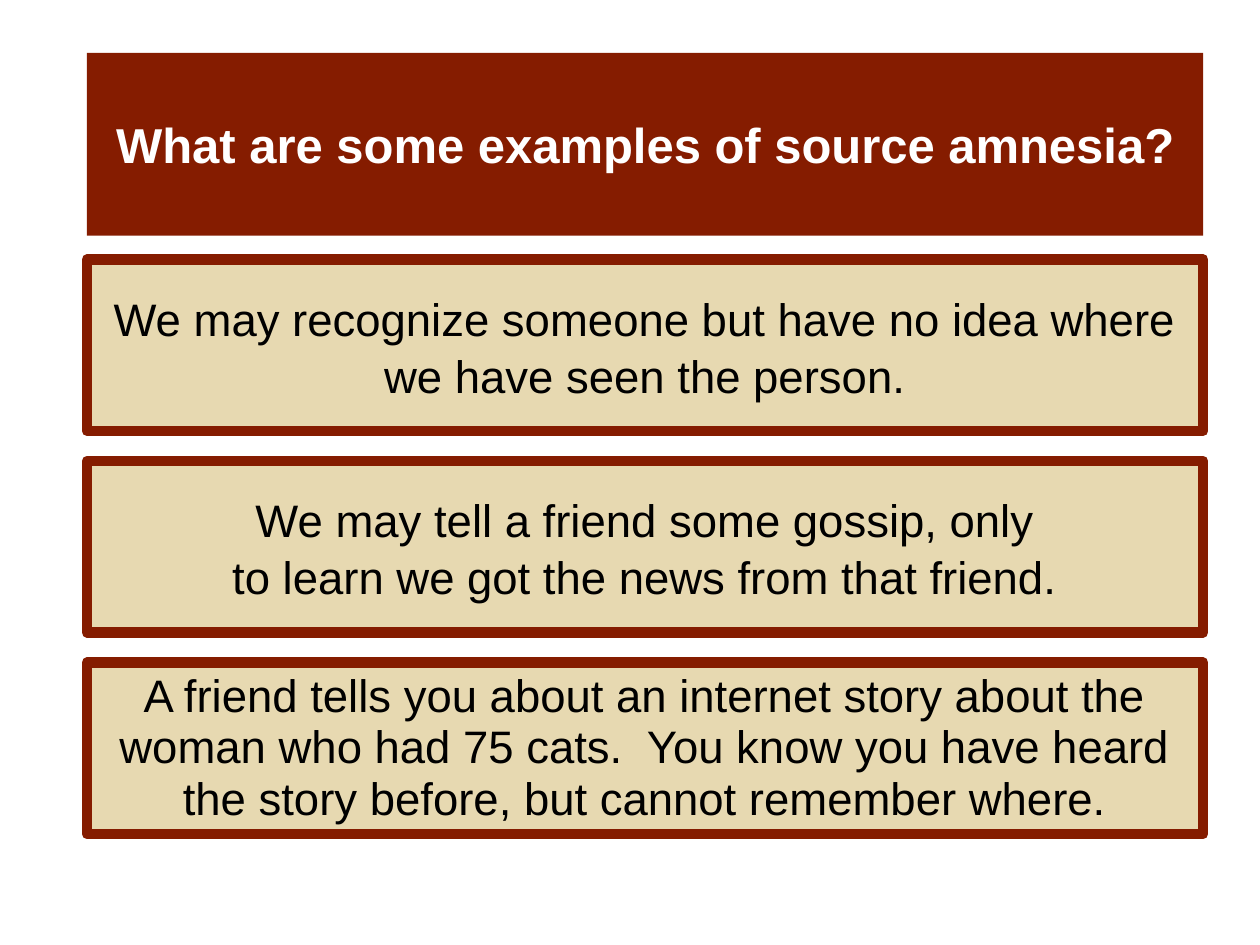
import pptx
import pptx.util
import pptx.dml.color
import pptx.enum.shapes
import pptx.enum.text

Pt = pptx.util.Pt
RGBColor = pptx.dml.color.RGBColor

# Content
TITLE = ["What are some examples of source amnesia?"]
EXAMPLES = [
    (["We may recognize someone but have no idea where we have seen the person."], 1.05),
    (["We may tell a friend some gossip, only",
      "to learn we got the news from that friend."], 1.05),
    (["A friend tells you about an internet story about the woman who had 75 cats.  "
      "You know you have heard the story before, but cannot remember where."], 0.94),
]

# Colours and formats
MAROON = RGBColor(0x85, 0x1C, 0x00)
SAND = RGBColor(0xE7, 0xD9, 0xB1)
WHITE = RGBColor(0xFF, 0xFF, 0xFF)
BLACK = RGBColor(0x00, 0x00, 0x00)
TITLE_FONT = {"name": "Arial", "size": Pt(28), "bold": True}
EXAMPLE_FONT = {"name": "Arial", "size": Pt(26), "bold": False}

# Layout in points
LEFT, WIDTH = 49.68, 637.92
TITLE_TOP, TITLE_HEIGHT = 30.24, 104.4
EXAMPLE_TOP, EXAMPLE_HEIGHT, EXAMPLE_STEP = 148.32, 97.92, 115.2


def add_panel(slide, top, height, fill, lines, font, color, spacing=1.0):
    shape = slide.shapes.add_shape(
        pptx.enum.shapes.MSO_SHAPE.RECTANGLE, Pt(LEFT), Pt(top), Pt(WIDTH), Pt(height))
    shape.shadow.inherit = False
    shape.fill.solid()
    shape.fill.fore_color.rgb = fill
    shape.line.fill.background()
    frame = shape.text_frame
    frame.word_wrap = True
    frame.vertical_anchor = pptx.enum.text.MSO_ANCHOR.MIDDLE
    for index, text in enumerate(lines):
        paragraph = frame.add_paragraph() if index else frame.paragraphs[0]
        paragraph.alignment = pptx.enum.text.PP_ALIGN.CENTER
        paragraph.line_spacing = spacing
        run = paragraph.add_run()
        run.text = text
        for attribute, value in font.items():
            setattr(run.font, attribute, value)
        run.font.color.rgb = color
    return shape


def main():
    presentation = pptx.Presentation()
    presentation.slide_width, presentation.slide_height = Pt(720), Pt(540)
    slide = presentation.slides.add_slide(presentation.slide_layouts[6])

    # Title band
    add_panel(slide, TITLE_TOP, TITLE_HEIGHT, MAROON, TITLE, TITLE_FONT, WHITE)

    # Framed examples, evenly stacked
    for index, (lines, spacing) in enumerate(EXAMPLES):
        panel = add_panel(slide, EXAMPLE_TOP + index * EXAMPLE_STEP, EXAMPLE_HEIGHT,
                          SAND, lines, EXAMPLE_FONT, BLACK, spacing)
        panel.line.color.rgb = MAROON
        panel.line.width = Pt(6)

    presentation.save("out.pptx")


if __name__ == "__main__":
    main()
